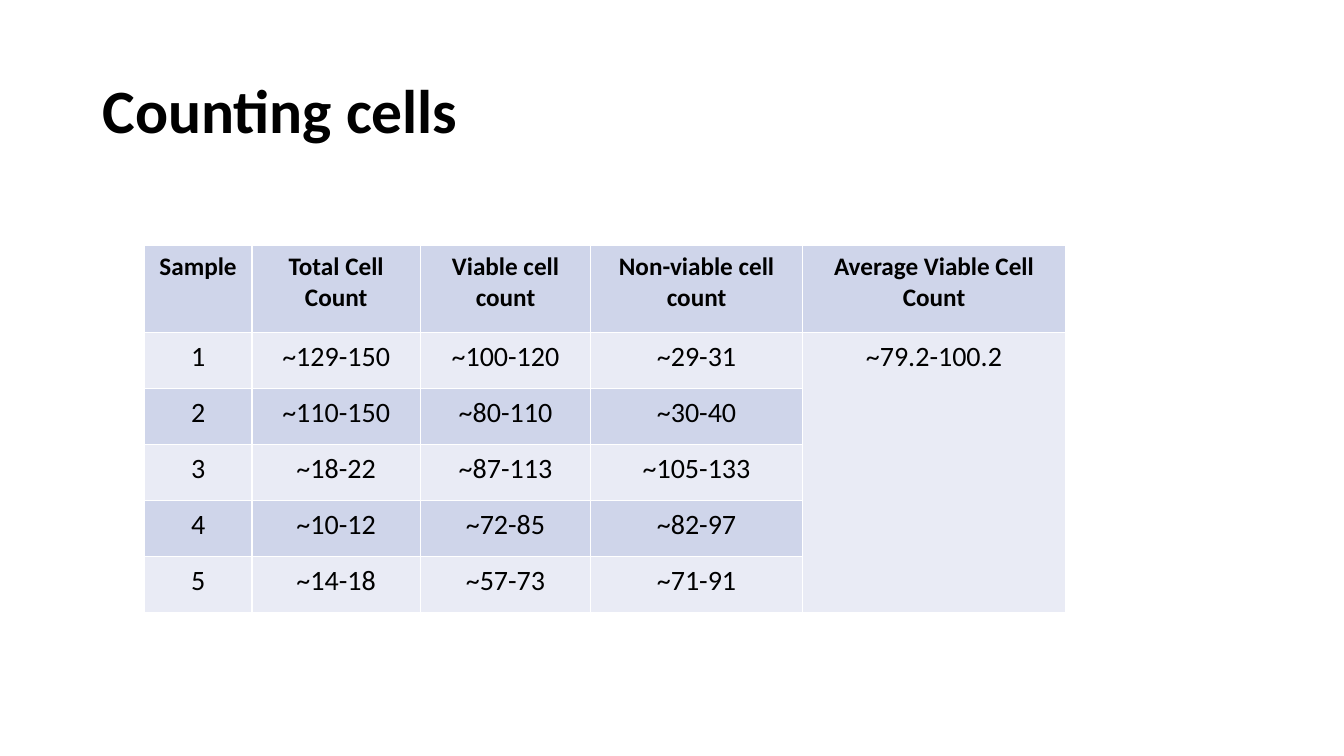
from lxml.etree import SubElement
from pptx import Presentation
from pptx.dml.color import RGBColor
from pptx.enum.text import MSO_ANCHOR, PP_ALIGN
from pptx.oxml.ns import qn
from pptx.util import Inches, Pt

HEADER = ["Sample", "Total Cell Count", "Viable cell count",
          "Non-viable cell count", "Average Viable Cell Count"]
COUNTS = [
    ["1", "~129-150", "~100-120", "~29-31", "~79.2-100.2"],
    ["2", "~110-150", "~80-110", "~30-40", ""],
    ["3", "~18-22", "~87-113", "~105-133", ""],
    ["4", "~10-12", "~72-85", "~82-97", ""],
    ["5", "~14-18", "~57-73", "~71-91", ""],
]
COL_WIDTHS = [1.07, 1.67, 1.69, 2.1, 2.61]
TABLE_H, HEADER_H = 3.65, 0.87
BANDS = ["CFD5EA", "E9EBF5"]


def set_font(p, size, bold):
    p.font.name = "Calibri"
    p.font.size = Pt(size)
    p.font.bold = bold
    p.font.color.rgb = RGBColor.from_string("000000")


def set_borders(cell, color):
    tcPr = cell._tc.get_or_add_tcPr()
    for side in ("a:lnL", "a:lnR", "a:lnT", "a:lnB"):
        ln = SubElement(tcPr, qn(side), w=str(Pt(1)))
        fill = SubElement(ln, qn("a:solidFill"))
        SubElement(fill, qn("a:srgbClr"), val=color)


prs = Presentation()
prs.slide_width, prs.slide_height = Inches(13.33), Inches(7.5)
s = prs.slides.add_slide(prs.slide_layouts[6])

title = s.shapes.add_textbox(Inches(0.92), Inches(0.4), Inches(11.5), Inches(1.45))
tf = title.text_frame
tf.word_wrap = True
tf.vertical_anchor = MSO_ANCHOR.MIDDLE
p = tf.paragraphs[0]
p.text = "Counting cells"
p.line_spacing = 0.9
set_font(p, 44, True)

rows = [HEADER] + COUNTS
table = s.shapes.add_table(len(rows), len(HEADER), Inches(1.43), Inches(2.43),
                           Inches(sum(COL_WIDTHS)), Inches(TABLE_H)).table
for col, width in zip(table.columns, COL_WIDTHS):
    col.width = Inches(width)
table.cell(1, 4).merge(table.cell(5, 4))

for i, row in enumerate(rows):
    table.rows[i].height = Inches((TABLE_H - HEADER_H) / len(COUNTS) if i else HEADER_H)
    for j, text in enumerate(row):
        cell = table.cell(i, j)
        set_borders(cell, "FFFFFF")
        cell.fill.solid()
        cell.fill.fore_color.rgb = RGBColor.from_string(BANDS[1 if cell.is_spanned else i % 2])
        cell.margin_left = cell.margin_right = Inches(0.07)
        cell.margin_top = cell.margin_bottom = Inches(0.07)
        if cell.is_spanned:
            continue
        p = cell.text_frame.paragraphs[0]
        p.text = text
        p.alignment = PP_ALIGN.CENTER
        set_font(p, 20 if i else 18, i == 0)

prs.save("out.pptx")
